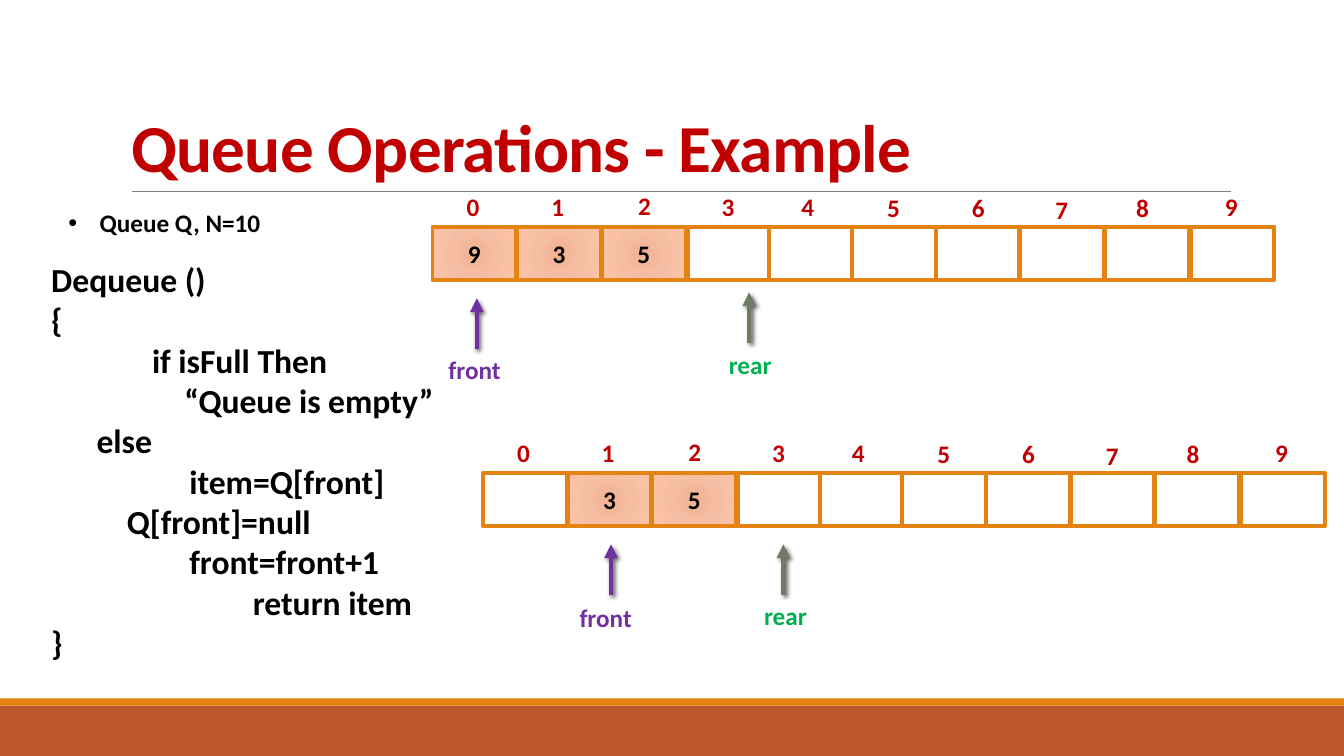
from dataclasses import dataclass

from lxml import etree
from pptx import Presentation
from pptx.dml.color import RGBColor
from pptx.enum.shapes import MSO_CONNECTOR, MSO_SHAPE
from pptx.enum.text import MSO_ANCHOR, MSO_AUTO_SIZE, PP_ALIGN
from pptx.oxml import parse_xml
from pptx.oxml.ns import qn
from pptx.util import Inches, Pt


@dataclass(frozen=True)
class Theme:
    font: str = "Calibri"
    red: str = "C00000"
    black: str = "000000"
    white: str = "FFFFFF"
    orange: str = "E48312"
    rust: str = "BD582C"
    grey: str = "808080"
    purple: str = "7030A0"
    olive: str = "6F7B63"
    green: str = "00B050"
    peach: tuple = ((0, "F0B191"), (45, "F5BEA4"), (100, "FDC3A8"))
    title: int = 48
    code: int = 24
    label: int = 18


theme = Theme()
A_NS = "http://schemas.openxmlformats.org/drawingml/2006/main"
STOPS = "".join(
    f'<a:gs pos="{pos * 1000}"><a:srgbClr val="{color}"/></a:gs>' for pos, color in theme.peach
)
PEACH_FILL = (
    f'<a:gradFill xmlns:a="{A_NS}" rotWithShape="1"><a:gsLst>{STOPS}</a:gsLst><a:path path="circle">'
    '<a:fillToRect l="100000" t="100000" r="100000" b="100000"/></a:path></a:gradFill>'
)
ARROW_SHADOW = (
    f'<a:effectLst xmlns:a="{A_NS}"><a:outerShdw blurRad="{Pt(3)}" dist="{Pt(2)}" dir="2700000">'
    f'<a:srgbClr val="{theme.black}"><a:alpha val="60000"/></a:srgbClr></a:outerShdw></a:effectLst>'
)


def add_run(p, text, size, color):
    r = p.add_run()
    r.text = text
    r.font.name = theme.font
    r.font.size = Pt(size)
    r.font.bold = True
    r.font.color.rgb = RGBColor.from_string(color)
    return r


def add_label(shapes, text, color, left, top, width):
    """Add a one-line text box that grows with its text."""
    s = shapes.add_textbox(Inches(left), Inches(top), Inches(width), Inches(0.4))
    s.text_frame.word_wrap = False
    s.text_frame.auto_size = MSO_AUTO_SIZE.SHAPE_TO_FIT_TEXT
    add_run(s.text_frame.paragraphs[0], text, theme.label, color)


prs = Presentation()
prs.slide_width, prs.slide_height = Inches(13.33), Inches(7.5)
slide = prs.slides.add_slide(prs.slide_layouts[5])

# Footer bands and title rule
for top, height, color in ((7, 0.5, theme.rust), (6.93, 0.07, theme.orange)):
    band = slide.shapes.add_shape(
        MSO_SHAPE.RECTANGLE, 0, Inches(top), prs.slide_width, Inches(height)
    )
    band.shadow.inherit = False
    band.fill.solid()
    band.fill.fore_color.rgb = RGBColor.from_string(color)
    band.line.fill.background()

rule = slide.shapes.add_connector(
    MSO_CONNECTOR.STRAIGHT, Inches(1.31), Inches(1.9), Inches(12.21), Inches(1.9)
)
rule.line.color.rgb = RGBColor.from_string(theme.grey)
rule.line.width = Pt(0.5)
etree.SubElement(rule._element.spPr, qn("a:effectLst"))

# Title
title = slide.shapes.title
title.left, title.top, title.width, title.height = map(Inches, (1.2, 0.31, 11, 1.59))
tf = title.text_frame
tf.word_wrap = True
tf.auto_size = MSO_AUTO_SIZE.NONE
tf.vertical_anchor = MSO_ANCHOR.BOTTOM
p = tf.paragraphs[0]
p.alignment = PP_ALIGN.LEFT
p.line_spacing = 0.85
r = add_run(p, "Queue Operations - Example", theme.title, theme.red)
r.font._element.set("spc", "-50")

# Bullet
bullet = slide.shapes.add_textbox(Inches(0.58), Inches(2.01), Inches(2.47), Inches(0.4))
bullet.text_frame.word_wrap = True
p = bullet.text_frame.paragraphs[0]
pPr = p._p.get_or_add_pPr()
pPr.set("marL", str(Inches(0.31)))
pPr.set("indent", str(Inches(-0.31)))
etree.SubElement(pPr, qn("a:buFont"), typeface="Arial")
etree.SubElement(pPr, qn("a:buChar"), char="•")
add_run(p, "Queue Q, N=10", theme.label, theme.black)

# Pseudocode: left indent in inches, text
code_lines = (
    (0, "Dequeue ()"),
    (0, "{"),
    (1, "if isFull Then"),
    (1.32, "“Queue is empty”"),
    (0.45, "else"),
    (1.37, "item=Q[front]"),
    (0.75, "Q[front]=null"),
    (1.37, "front=front+1"),
    (2, "return item"),
    (0, "}"),
)
code = slide.shapes.add_textbox(Inches(0.41), Inches(2.52), Inches(4.24), Inches(4.14))
tf = code.text_frame
tf.word_wrap = True
for i, (indent, text) in enumerate(code_lines):
    p = tf.add_paragraph() if i else tf.paragraphs[0]
    p._p.get_or_add_pPr().set("marL", str(Inches(indent)))
    add_run(p, text, theme.code, theme.black)

# Queues: cell and index offsets from the left and top of the first cell
cell_offsets = (0, 0.84, 1.68, 2.53, 3.34, 4.16, 4.99, 5.83, 6.67, 7.52)
index_offsets = (
    (0.24, -0.4), (1.08, -0.4), (1.94, -0.41), (2.77, -0.4), (3.56, -0.4),
    (4.41, -0.39), (5.25, -0.39), (6.08, -0.37), (6.88, -0.39), (7.76, -0.4),
)
# Pointer: name, arrow colour, text colour, arrow x, arrow tip y, label left, top, width
queues = (
    (4.29, 2.25, {0: "9", 1: "3", 2: "5"}, (
        ("front", theme.purple, theme.purple, 4.73, 2.96, 4.35, 3.47, 0.76),
        ("rear", theme.olive, theme.green, 7.43, 2.9, 7.13, 3.42, 0.69),
    )),
    (4.79, 4.69, {1: "3", 2: "5"}, (
        ("front", theme.purple, theme.purple, 6.06, 5.4, 5.65, 5.93, 0.76),
        ("rear", theme.olive, theme.green, 7.77, 5.4, 7.48, 5.91, 0.69),
    )),
)
for left, top, items, pointers in queues:
    shapes = slide.shapes.add_group_shape().shapes
    for i, (cell_dx, (index_dx, index_dy)) in enumerate(zip(cell_offsets, index_offsets)):
        cell = shapes.add_shape(
            MSO_SHAPE.RECTANGLE, Inches(left + cell_dx), Inches(top), Inches(0.83), Inches(0.53)
        )
        cell.shadow.inherit = False
        cell.line.color.rgb = RGBColor.from_string(theme.orange)
        cell.line.width = Pt(2.75)
        if i in items:
            cell._element.spPr.find(qn("a:prstGeom")).addnext(parse_xml(PEACH_FILL))
            cell.text_frame.vertical_anchor = MSO_ANCHOR.MIDDLE
            p = cell.text_frame.paragraphs[0]
            p.alignment = PP_ALIGN.CENTER
            add_run(p, items[i], theme.label, theme.black)
        else:
            cell.fill.solid()
            cell.fill.fore_color.rgb = RGBColor.from_string(theme.white)
        add_label(shapes, str(i), theme.red, left + index_dx, top + index_dy, 0.34)

    for name, arrow_color, text_color, x, tip, label_left, label_top, width in pointers:
        arrow = shapes.add_connector(
            MSO_CONNECTOR.STRAIGHT, Inches(x), Inches(tip + 0.5), Inches(x), Inches(tip)
        )
        arrow.line.color.rgb = RGBColor.from_string(arrow_color)
        arrow.line.width = Pt(3.25)
        etree.SubElement(arrow.line._get_or_add_ln(), qn("a:tailEnd"), type="triangle")
        arrow._element.spPr.append(parse_xml(ARROW_SHADOW))
        add_label(shapes, name, text_color, label_left, label_top, width)

prs.save("out.pptx")
